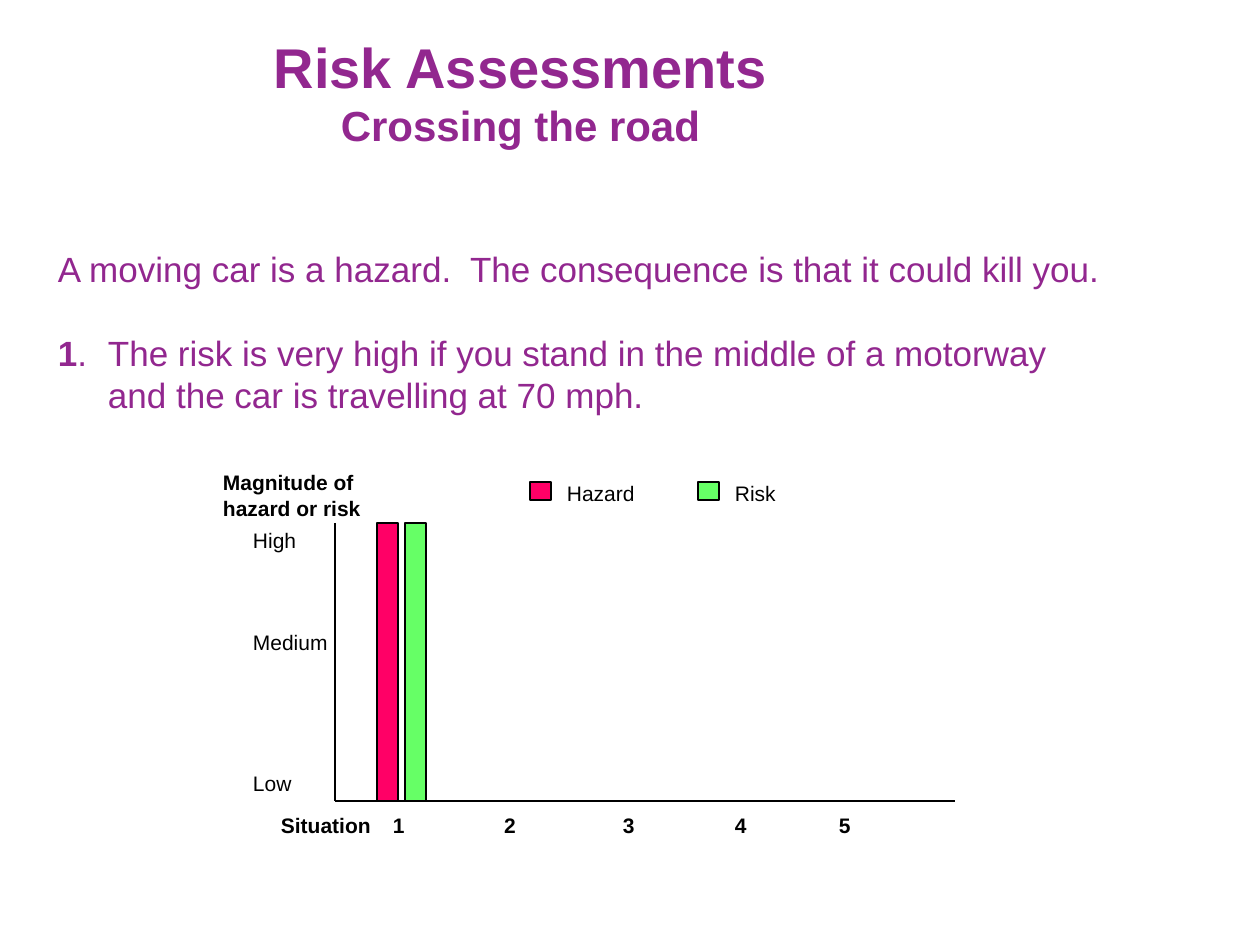
from lxml import etree
from pptx import Presentation
from pptx.dml.color import RGBColor
from pptx.enum.shapes import MSO_CONNECTOR, MSO_SHAPE
from pptx.enum.text import MSO_ANCHOR, PP_ALIGN
from pptx.oxml.ns import qn
from pptx.util import Emu, Pt

RECT = MSO_SHAPE.RECTANGLE
STRAIGHT = MSO_CONNECTOR.STRAIGHT
TOP = MSO_ANCHOR.TOP
LEFT, CENTER = PP_ALIGN.LEFT, PP_ALIGN.CENTER
FONT = "Arial"
COLORS = {"heading": "92278F", "ink": "000000", "hazard": "FF0066", "risk": "66FF66"}
AXIS_LEFT, AXIS_TOP, AXIS_RIGHT, AXIS_BOTTOM = 335, 523, 955, 801


def px(n):
    return Emu(round(n * 914400 / 126))


def color(name):
    return RGBColor.from_string(COLORS[name])


def style(r, size, name, bold=False):
    r.font.name = FONT
    r.font.size = Pt(size)
    r.font.bold = bold
    r.font.color.rgb = color(name)


def setup_frame(sp, inset_x, inset_y):
    tf = sp.text_frame
    tf.word_wrap = True
    tf.vertical_anchor = TOP
    tf.margin_left = tf.margin_right = px(inset_x)
    tf.margin_top = tf.margin_bottom = px(inset_y)
    return tf


def add_title(s, lines):
    sp = s.shapes.title
    sp.left, sp.top, sp.width, sp.height = px(69), px(26), px(903), px(131)
    tf = setup_frame(sp, 13, 6)
    tf.text = "\n".join(text for text, size in lines)
    for p, (text, size) in zip(tf.paragraphs, lines):
        p.alignment = CENTER
        p.space_before = Pt(0)
        style(p.runs[0], size, "heading", True)


def add_body(s, paragraphs):
    sp = s.shapes.add_textbox(px(45), px(241), px(1082), px(220))
    tf = setup_frame(sp, 13, 6)
    for i, runs in enumerate(paragraphs):
        p = tf.paragraphs[0] if i == 0 else tf.add_paragraph()
        p.alignment = LEFT
        p.space_before = Pt(24 * i)
        pPr = p._p.get_or_add_pPr()
        pPr.set("marL", str(px(50)))
        pPr.set("indent", str(-px(50)))
        for text, bold in runs:
            r = p.add_run()
            r.text = text
            style(r, 20, "heading", bold)


def add_label(s, text, x, y, w, h=30, bold=False):
    tf = setup_frame(s.shapes.add_textbox(px(x), px(y), px(w), px(h)), 9, 4)
    tf.text = text
    for p in tf.paragraphs:
        style(p.runs[0], 12, "ink", bold)


def add_axis(s, x1, y1, x2, y2):
    c = s.shapes.add_connector(STRAIGHT, px(x1), px(y1), px(x2), px(y2))
    c.line.color.rgb = color("ink")
    c.line.width = Pt(0.75)
    etree.SubElement(c._element.spPr, qn("a:effectLst"))


def add_box(s, name, x, y, w, h):
    sp = s.shapes.add_shape(RECT, px(x), px(y), px(w), px(h))
    sp.shadow.inherit = False
    sp.fill.solid()
    sp.fill.fore_color.rgb = color(name)
    sp.line.color.rgb = color("ink")
    sp.line.width = Pt(0.75)


def add_risk_graph(s):
    add_axis(s, AXIS_LEFT, AXIS_TOP, AXIS_LEFT, AXIS_BOTTOM)
    add_axis(s, AXIS_LEFT, AXIS_BOTTOM, AXIS_RIGHT, AXIS_BOTTOM)
    for text, y in (("High", 523), ("Medium", 626), ("Low", 766)):
        add_label(s, text, 244, y, 121)
    add_label(s, "Magnitude of\nhazard or risk", 214, 466, 194, 53, True)
    add_label(s, "Situation", 272, 809, 131, bold=True)
    for number, x in enumerate((384, 495, 614, 726, 830), 1):
        add_label(s, str(number), x, 809, 30, bold=True)
    series = (("Hazard", "hazard", 377, 530), ("Risk", "risk", 405, 698))
    for text, name, bar_x, key_x in series:
        add_box(s, name, bar_x, AXIS_TOP, 21, AXIS_BOTTOM - AXIS_TOP)
        add_box(s, name, key_x, 482, 21, 18)
        add_label(s, text, key_x + 28, 476, 113)


def main():
    prs = Presentation()
    prs.slide_width, prs.slide_height = px(1260), px(945)
    s = prs.slides.add_slide(prs.slide_layouts[5])
    add_title(s, [("Risk Assessments", 32), ("Crossing the road", 24)])
    add_body(s, [
        [("A moving car is a hazard.  The consequence is that it could kill you.", False)],
        [("1", True), (".\tThe risk is very high if you stand in the middle of a motorway "
                       "and the car is travelling at 70 mph.", False)],
    ])
    add_risk_graph(s)
    prs.save("out.pptx")


if __name__ == "__main__":
    main()
